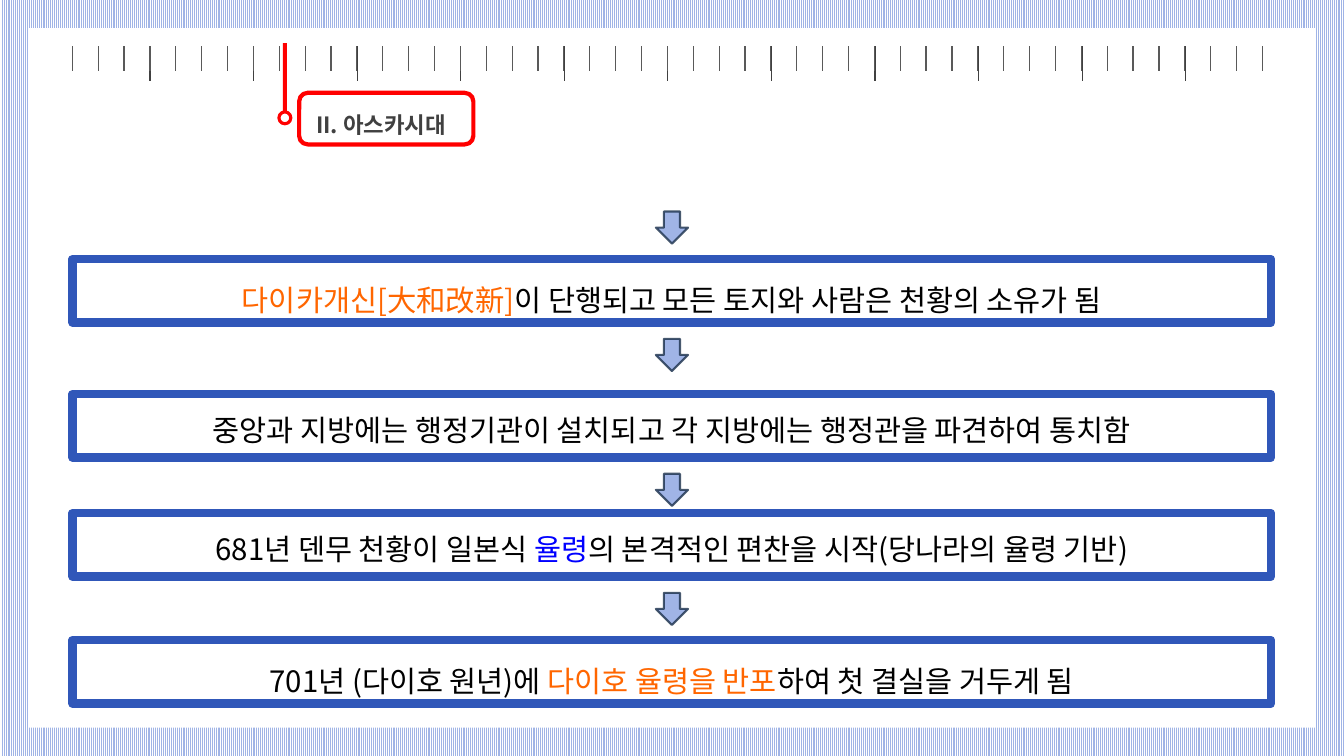
from lxml.etree import SubElement
from pptx import Presentation
from pptx.dml.color import RGBColor
from pptx.enum.dml import MSO_PATTERN
from pptx.enum.shapes import MSO_SHAPE
from pptx.enum.text import MSO_AUTO_SIZE, PP_ALIGN
from pptx.oxml.ns import qn
from pptx.util import Cm, Pt

# Content
FONT = "Noto Sans CJK KR"
BLACK, ORANGE, BLUE = "000000", "FF6600", "0000FF"
RED, WHITE, GREY, PERIWINKLE = "FF0000", "FFFFFF", "404040", "A0B4E6"
HEADING = [("II. 아스카시대", GREY)]
# Each step: top of its box, shift of its text, runs
STEPS = [
    (6.53, -0.08, [("다이카개신[大和改新]", ORANGE),
                   ("이 단행되고 모든 토지와 사람은 천황의 소유가 됨", BLACK)]),
    (9.93, -0.2, [("중앙과 지방에는 행정기관이 설치되고 각 지방에는 행정관을 파견하여 통치함", BLACK)]),
    (12.93, -0.2, [("681년 덴무 천황이 일본식 ", BLACK), ("율령", BLUE),
                   ("의 본격적인 편찬을 시작(당나라의 율령 기반)", BLACK)]),
    (16.13, -0.08, [("701년 (다이호 원년)에 ", BLACK), ("다이호 율령을 반포", ORANGE),
                    ("하여 첫 결실을 거두게 됨", BLACK)]),
]
# Each ruler row: columns, tick length, colour
RULERS = [(12, 0.86, GREY), (48, 0.61, "595959")]

# Measures in centimetres
SLIDE_W, SLIDE_H = 33.87, 19.05
MARGIN = 0.71
RULER_LEFT, RULER_W = 1.17, 31.32
HEADING_LEFT, HEADING_TOP, HEADING_W, HEADING_H = 7.54, 2.34, 4.39, 1.3
BOX_LEFT, BOX_W, BOX_H, TEXT_H = 1.83, 30.2, 1.6, 1.68
ARROW, ARROW_GAP, FIRST_ARROW_TOP = 0.81, 0.41, 5.33


def color(code):
    return RGBColor.from_string(code)


def add_outline(shapes, preset, at, fill=None, line=None, width=0):
    shape = shapes.add_shape(preset, *map(Cm, at))
    shape.shadow.inherit = False
    if fill:
        shape.fill.solid()
        shape.fill.fore_color.rgb = color(fill)
    else:
        shape.fill.background()
    if line:
        shape.line.color.rgb = color(line)
        shape.line.width = Pt(width)
    else:
        shape.line.fill.background()
    return shape


def add_text(shapes, at, runs, size, spacing, align, bold=False):
    frame = shapes.add_textbox(*map(Cm, at)).text_frame
    frame.word_wrap = True
    paragraph = frame.paragraphs[0]
    paragraph.alignment = align
    paragraph.line_spacing = spacing
    for words, code in runs:
        run = paragraph.add_run()
        run.text = words
        run.font.size = Pt(size)
        run.font.bold = bold
        run.font.name = FONT
        run.font.color.rgb = color(code)
        SubElement(run.font._element, qn("a:ea"), typeface=FONT)
    return frame


def add_border(cell, side, code):
    border = SubElement(cell._tc.get_or_add_tcPr(), qn("a:" + side), w=str(Pt(1)))
    SubElement(SubElement(border, qn("a:solidFill")), qn("a:srgbClr"), val=code)


def add_ruler(shapes, columns, tick, code):
    at = (RULER_LEFT, RULER_LEFT, RULER_W, tick)
    ruler = shapes.add_table(1, columns, *map(Cm, at)).table
    ruler.first_row = ruler.horz_banding = False
    style = ruler._tbl.tblPr.find(qn("a:tableStyleId"))
    style.text = "{2D5ABB26-0587-4C30-8999-92F81FD0307C}"
    for index, column in enumerate(ruler.columns):
        column.width = Cm(RULER_W / columns)
        cell = ruler.cell(0, index)
        cell.margin_left = cell.margin_right = cell.margin_top = cell.margin_bottom = 0
        SubElement(cell.text_frame.paragraphs[0]._p, qn("a:endParaRPr"), sz="100")
        # Only the inner edges carry ticks
        if index > 0:
            add_border(cell, "lnL", code)
        if index < columns - 1:
            add_border(cell, "lnR", code)
        cell.fill.background()


def add_arrow(shapes, top):
    at = ((SLIDE_W - ARROW) / 2, top, ARROW, ARROW)
    arrow = add_outline(shapes, MSO_SHAPE.DOWN_ARROW, at, PERIWINKLE, "172D48", 1.5)
    line_color = arrow.line._ln.find(".//" + qn("a:srgbClr"))
    SubElement(line_color, qn("a:alpha"), val="78000")


def main():
    deck = Presentation()
    deck.slide_width, deck.slide_height = Cm(SLIDE_W), Cm(SLIDE_H)
    slide = deck.slides.add_slide(deck.slide_layouts[6])
    shapes = slide.shapes

    # Striped background and white panel
    stripes = slide.background.fill
    stripes.patterned()
    stripes.pattern = MSO_PATTERN.NARROW_VERTICAL
    stripes.fore_color.rgb = color(PERIWINKLE)
    stripes.back_color.rgb = color(WHITE)
    panel = (MARGIN, MARGIN, SLIDE_W - 2 * MARGIN, SLIDE_H - 2 * MARGIN)
    add_outline(shapes, MSO_SHAPE.RECTANGLE, panel, WHITE)

    # Ruler with long and short ticks
    for columns, tick, code in RULERS:
        add_ruler(shapes, columns, tick, code)

    # Red pointer and heading
    pointer = shapes.add_group_shape().shapes
    add_outline(pointer, MSO_SHAPE.RECTANGLE, (7.13, 1.09, 0.1, 1.8), RED)
    add_outline(pointer, MSO_SHAPE.OVAL, (7.03, 2.82, 0.3, 0.3), WHITE, RED, 2.25)
    add_outline(shapes, MSO_SHAPE.ROUNDED_RECTANGLE,
                (HEADING_LEFT, HEADING_TOP, HEADING_W, HEADING_H), line=RED, width=3)
    add_text(shapes, (HEADING_LEFT + 0.18, HEADING_TOP, HEADING_W, HEADING_H),
             HEADING, 16, 1.5, PP_ALIGN.LEFT, bold=True)

    # Steps, each with an arrow above its box
    arrow_top = FIRST_ARROW_TOP
    for top, shift, runs in STEPS:
        add_arrow(shapes, arrow_top)
        add_outline(shapes, MSO_SHAPE.RECTANGLE, (BOX_LEFT, top, BOX_W, BOX_H),
                    line="3057B9", width=6)
        sentence = add_text(shapes, (BOX_LEFT, top + shift, BOX_W, TEXT_H),
                            runs, 21, 1.6, PP_ALIGN.CENTER)
        sentence.auto_size = MSO_AUTO_SIZE.SHAPE_TO_FIT_TEXT
        arrow_top = top + BOX_H + ARROW_GAP

    deck.save("out.pptx")


if __name__ == "__main__":
    main()
